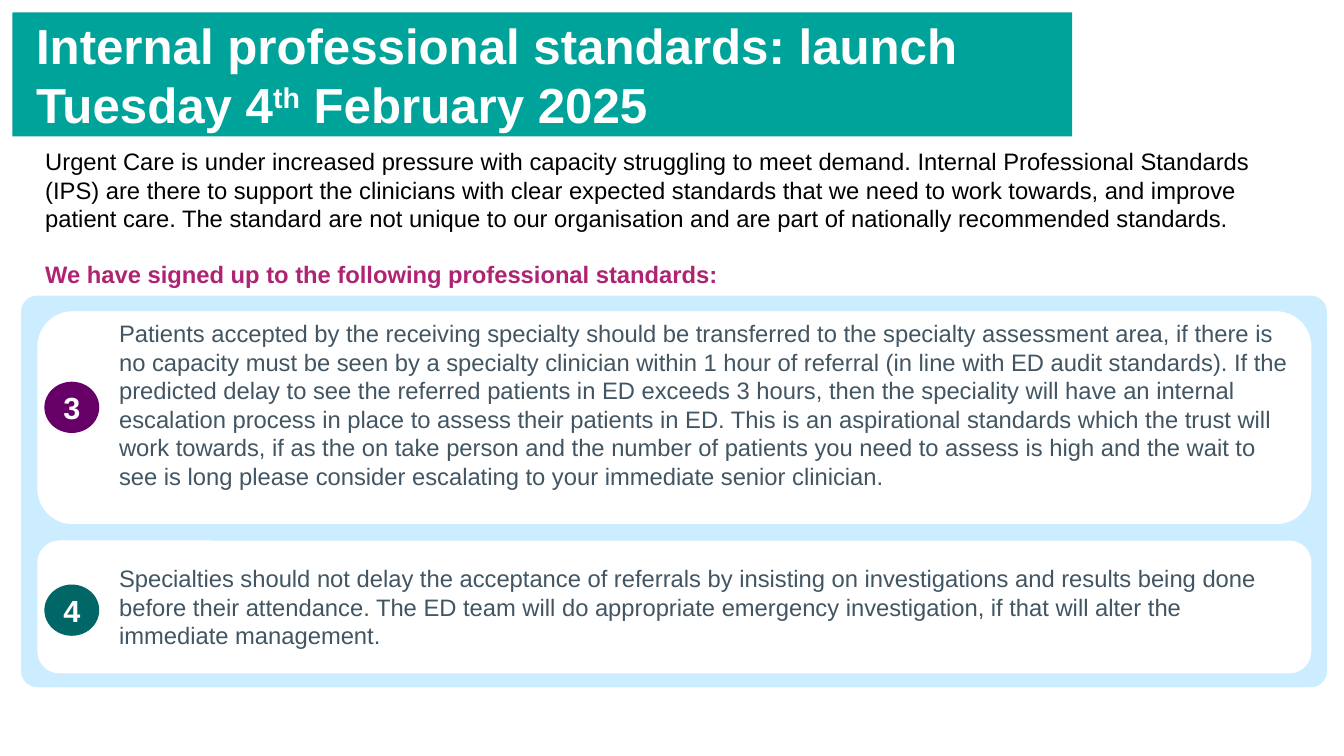
from dataclasses import dataclass

from lxml.etree import SubElement
from pptx import Presentation
from pptx.dml.color import RGBColor
from pptx.enum.shapes import MSO_SHAPE
from pptx.enum.text import MSO_ANCHOR, MSO_AUTO_SIZE, PP_ALIGN
from pptx.oxml.ns import qn
from pptx.util import Cm, Pt

WHITE = RGBColor(0xFF, 0xFF, 0xFF)
BLACK = RGBColor(0x00, 0x00, 0x00)
TEAL = RGBColor(0x00, 0xA3, 0x99)
PALE_BLUE = RGBColor(0xCC, 0xEC, 0xFF)
PURPLE = RGBColor(0x66, 0x00, 0x66)
DARK_TEAL = RGBColor(0x00, 0x66, 0x66)
SLATE = RGBColor(0x41, 0x55, 0x63)
MAGENTA = RGBColor(0xAE, 0x24, 0x73)

TITLE_RUNS = (("Internal professional standards: launch Tuesday 4", False),
              ("th", True), (" February 2025", False))
INTRO = ("Urgent Care is under increased pressure with capacity struggling to meet demand. "
         "Internal Professional Standards (IPS) are there to support the clinicians with clear "
         "expected standards that we need to work towards, and improve patient care. The standard "
         "are not unique to our organisation and are part of nationally recommended standards.")
SIGNED_UP = "We have signed up to the following professional standards:"


@dataclass
class Standard:
    number: str
    wording: str
    colour: RGBColor
    card_top: float
    card_height: float
    badge_top: float
    text_top: float
    text_height: float


STANDARDS = (
    Standard("3",
             "Patients accepted by the receiving specialty should be transferred to the specialty "
             "assessment area, if there is no capacity must be seen by a specialty clinician within "
             "1 hour of referral (in line with ED audit standards). If the predicted delay to see "
             "the referred patients in ED exceeds 3 hours, then the speciality will have an "
             "internal escalation process in place to assess their patients in ED. This is an "
             "aspirational standards which the trust will work towards, if as the on take person "
             "and the number of patients you need to assess is high and the wait to see is long "
             "please consider escalating to your immediate senior clinician.",
             PURPLE, 12.9, 8.92, 15.9, 13.13, 7.44),
    Standard("4",
             "Specialties should not delay the acceptance of referrals by insisting on "
             "investigations and results being done before their attendance. The ED team will do "
             "appropriate emergency investigation, if that will alter the immediate management.",
             DARK_TEAL, 22.43, 5.59, 24.33, 23.32, 3.84),
)


def place(shape, left: float, top: float, width: float, height: float) -> None:
    shape.left, shape.top = Cm(left), Cm(top)
    shape.width, shape.height = Cm(width), Cm(height)


def set_insets(frame, left: float, top: float, right: float, bottom: float) -> None:
    frame.margin_left, frame.margin_top = Cm(left), Cm(top)
    frame.margin_right, frame.margin_bottom = Cm(right), Cm(bottom)


def set_font(paragraph, size: float, colour: RGBColor, bold: bool = False) -> None:
    font = paragraph.font
    font.name, font.size, font.bold = "Arial", Pt(size), bold
    font.color.rgb = colour


def add_block(slide, preset: MSO_SHAPE, left: float, top: float, width: float,
              height: float, fill: RGBColor, line: RGBColor):
    block = slide.shapes.add_shape(preset, Cm(left), Cm(top), Cm(width), Cm(height))
    block.shadow.inherit = False
    block.fill.solid()
    block.fill.fore_color.rgb = fill
    block.line.color.rgb = line
    block.line.width = Pt(2)
    return block


def add_standard(slide, standard: Standard) -> None:
    add_block(slide, MSO_SHAPE.ROUNDED_RECTANGLE, 1.52, standard.card_top,
              53.01, standard.card_height, WHITE, PALE_BLUE)

    badge = add_block(slide, MSO_SHAPE.OVAL, 1.88, standard.badge_top, 2.21, 2.06,
                      standard.colour, standard.colour)
    badge.text_frame.vertical_anchor = MSO_ANCHOR.MIDDLE
    number = badge.text_frame.paragraphs[0]
    number.text = standard.number
    number.alignment = PP_ALIGN.CENTER
    set_font(number, 36, WHITE, bold=True)

    frame = slide.shapes.add_textbox(Cm(4.7), Cm(standard.text_top), Cm(49.25),
                                     Cm(standard.text_height)).text_frame
    frame.word_wrap = True
    wording = frame.paragraphs[0]
    wording.text = standard.wording
    set_font(wording, 28, SLATE)


def fill_title(title) -> None:
    place(title, 0.51, 0.51, 44.04, 5.16)
    title.fill.solid()
    title.fill.fore_color.rgb = TEAL
    frame = title.text_frame
    frame.auto_size = MSO_AUTO_SIZE.NONE
    frame.vertical_anchor = MSO_ANCHOR.MIDDLE
    set_insets(frame, 0.99, 0.3, 1.19, 0.3)
    heading = frame.paragraphs[0]
    heading.alignment = PP_ALIGN.LEFT
    set_font(heading, 58, WHITE, bold=True)
    for words, raised in TITLE_RUNS:
        run = heading.add_run()
        run.text = words
        if raised:
            run._r.get_or_add_rPr().set("baseline", "30000")


def fill_intro(body) -> None:
    place(body, 1.88, 6.1, 52.07, 7.19)
    frame = body.text_frame
    frame.auto_size = MSO_AUTO_SIZE.NONE
    set_insets(frame, 0, 0, 0, 0)
    frame.text = f"{INTRO}\n{SIGNED_UP}"
    styles = ((0, BLACK, False), (32, MAGENTA, True))
    for paragraph, (gap, colour, bold) in zip(frame.paragraphs, styles):
        paragraph.space_before = Pt(gap)
        properties = paragraph._p.get_or_add_pPr()
        properties.set("marL", "0")
        properties.set("indent", "0")
        SubElement(properties, qn("a:buNone"))
        set_font(paragraph, 28, colour, bold)


def main() -> None:
    deck = Presentation()
    deck.slide_width, deck.slide_height = Cm(55.85), Cm(31.42)
    slide = deck.slides.add_slide(deck.slide_layouts[1])

    # Heading and introduction
    fill_title(slide.shapes.title)
    fill_intro(slide.placeholders[1])

    # Panel of numbered standards
    panel = add_block(slide, MSO_SHAPE.ROUNDED_RECTANGLE, 0.91, 12.32, 54.2, 16.21,
                      PALE_BLUE, PALE_BLUE)
    panel.adjustments[0] = 0.04
    for standard in STANDARDS:
        add_standard(slide, standard)

    deck.save("out.pptx")


if __name__ == "__main__":
    main()
